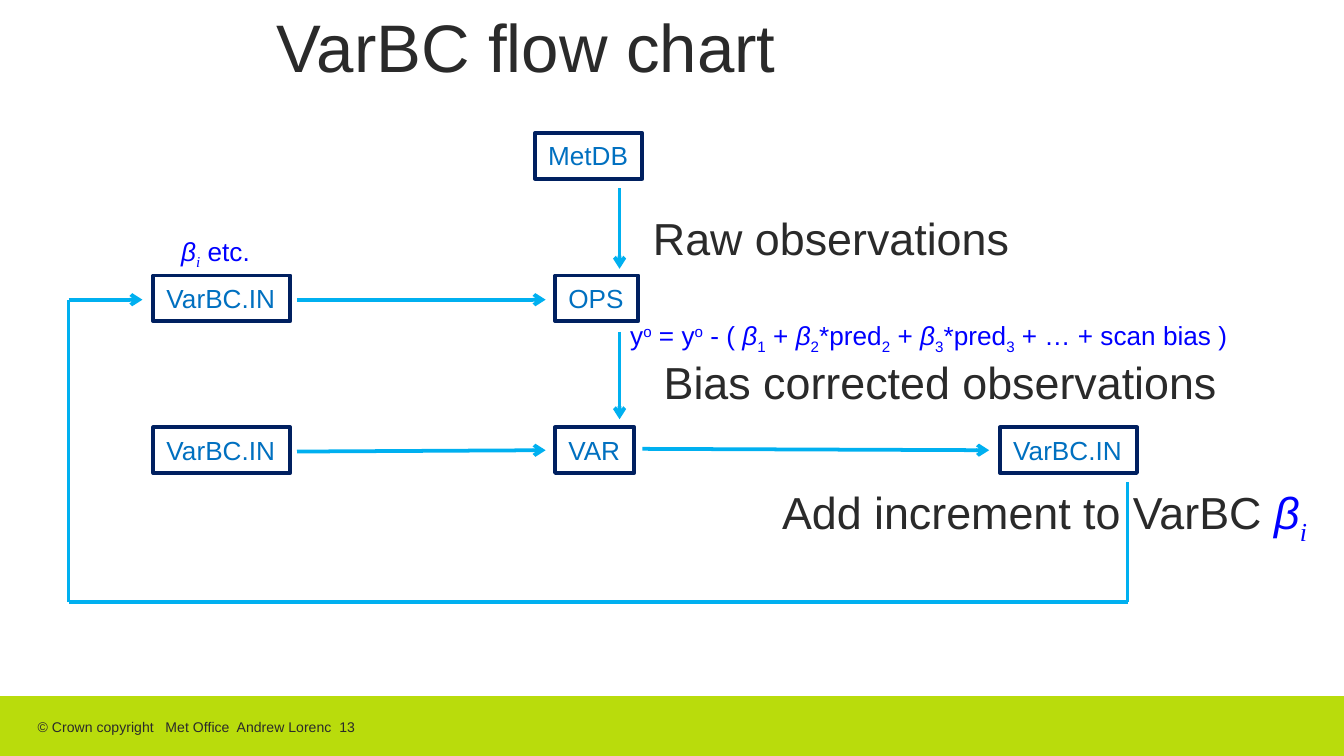
from lxml import etree
from pptx import Presentation
from pptx.dml.color import RGBColor
from pptx.enum.shapes import MSO_CONNECTOR, MSO_SHAPE
from pptx.enum.text import MSO_ANCHOR, PP_ALIGN
from pptx.oxml.ns import qn
from pptx.util import Inches, Pt

RECT = MSO_SHAPE.RECTANGLE
STRAIGHT = MSO_CONNECTOR.STRAIGHT
LEFT = PP_ALIGN.LEFT
TOP, MIDDLE = MSO_ANCHOR.TOP, MSO_ANCHOR.MIDDLE

COLORS = {"text": "2A2A2A", "math": "0000FF", "box_text": "0070C0",
          "box_line": "002060", "arrow": "00B0F0", "footer": "B9DC0C"}
BASELINES = {"sub": "-25000", "sup": "30000"}


def rgb(name):
    return RGBColor.from_string(COLORS[name])


def write(sp, *runs, size=14, color="text", wrap=False, anchor=TOP,
          insets=(0.1, 0.05, 0.1, 0.05)):
    """Each run is a string or (string, dict of italic, base, font, color)."""
    tf = sp.text_frame
    tf.word_wrap = wrap
    tf.vertical_anchor = anchor
    tf.margin_left, tf.margin_top, tf.margin_right, tf.margin_bottom = map(Inches, insets)
    p = tf.paragraphs[0]
    p.alignment = LEFT
    for run in runs:
        text, fmt = (run, {}) if isinstance(run, str) else run
        r = p.add_run()
        r.text = text
        r.font.size = Pt(size)
        r.font.name = fmt.get("font", "Arial")
        r.font.italic = fmt.get("italic", False)
        r.font.color.rgb = rgb(fmt.get("color", color))
        if "base" in fmt:
            r.font._element.set("baseline", BASELINES[fmt["base"]])


# 16:9 slide
prs = Presentation()
prs.slide_width = Inches(10)
prs.slide_height = Inches(10 * 9 / 16)
s = prs.slides.add_slide(prs.slide_layouts[6])

# Formula parts
SUB, SUP = {"base": "sub"}, {"base": "sup"}
beta = ("β", {"italic": True, "color": "math"})
index = ("i", {"italic": True, "color": "math", "base": "sub", "font": "Times New Roman"})

# Process boxes
row_ops, row_var, box_h = 2.05, 3.18, 0.34
for label, x, y, w in [
    ("MetDB", 3.98, 0.99, 0.8),
    ("VarBC.IN", 1.14, row_ops, 1.02),
    ("OPS", 4.13, row_ops, 0.62),
    ("VarBC.IN", 1.14, row_var, 1.02),
    ("VAR", 4.13, row_var, 0.59),
    ("VarBC.IN", 7.44, row_var, 1.02),
]:
    sp = s.shapes.add_shape(RECT, Inches(x), Inches(y), Inches(w), Inches(box_h))
    sp.shadow.inherit = False
    sp.fill.background()
    sp.line.color.rgb = rgb("box_line")
    sp.line.width = Pt(2)
    write(sp, label, color="box_text")

# Flow arrows and the feedback loop
down_x, loop_left, loop_right, loop_y = 4.61, 0.51, 8.39, 4.48
ops_y = 2.23
for x1, y1, x2, y2, arrow in [
    (down_x, 1.4, down_x, 2, True),
    (down_x, 2.47, down_x, 3.12, True),
    (2.21, ops_y, 4.06, ops_y, True),
    (2.21, 3.36, 4.06, 3.35, True),
    (4.78, 3.34, 7.36, 3.35, True),
    (loop_right, 3.59, loop_right, loop_y, False),
    (loop_right, loop_y, loop_left, loop_y, False),
    (loop_left, loop_y, loop_left, ops_y, False),
    (loop_left, ops_y, 1.06, ops_y, True),
]:
    line = s.shapes.add_connector(STRAIGHT, Inches(x1), Inches(y1), Inches(x2), Inches(y2))
    line.line.color.rgb = rgb("arrow")
    line.line.width = Pt(2)
    if arrow:
        etree.SubElement(line.line._get_or_add_ln(), qn("a:tailEnd"), type="arrow")
    etree.SubElement(line._element.spPr, qn("a:effectLst"))

# Footer band
sp = s.shapes.add_shape(RECT, 0, Inches(5.18), Inches(10), Inches(0.45))
sp.shadow.inherit = False
sp.fill.solid()
sp.fill.fore_color.rgb = rgb("footer")
sp.line.fill.background()
write(sp, "© Crown copyright   Met Office  Andrew Lorenc  13", size=7.5, wrap=True,
      anchor=MIDDLE, insets=(0.28, 0.04, 0.07, 0.03))

# Title, captions and formulas
equation = ["y", ("o", SUP), " = y", ("o", SUP), " - ( ", beta, ("1", SUB)]
for n in "23":
    equation += [" + ", beta, (n, SUB), "*pred", (n, SUB)]
equation.append(" + … + scan bias )")

for x, y, w, h, runs, fmt in [
    (1.99, 0, 7.45, 0.71, ["VarBC flow chart"],
     {"size": 36, "wrap": True, "insets": (0.07, 0.04, 0.07, 0.04)}),
    (4.76, 1.52, 2.88, 0.5, ["Raw observations"], {"size": 24}),
    (4.84, 2.59, 4.36, 0.5, ["Bias corrected observations"], {"size": 24}),
    (5.72, 3.56, 4.62, 0.5, ["Add increment to VarBC ", beta, index],
     {"size": 24, "wrap": True}),
    (4.59, 2.33, 5.32, 0.34, equation, {"color": "math", "wrap": True}),
    (1.25, 1.7, 0.74, 0.34, [beta, index, " etc."], {"color": "math", "wrap": True}),
]:
    sp = s.shapes.add_textbox(Inches(x), Inches(y), Inches(w), Inches(h))
    write(sp, *runs, **fmt)

prs.save("out.pptx")
